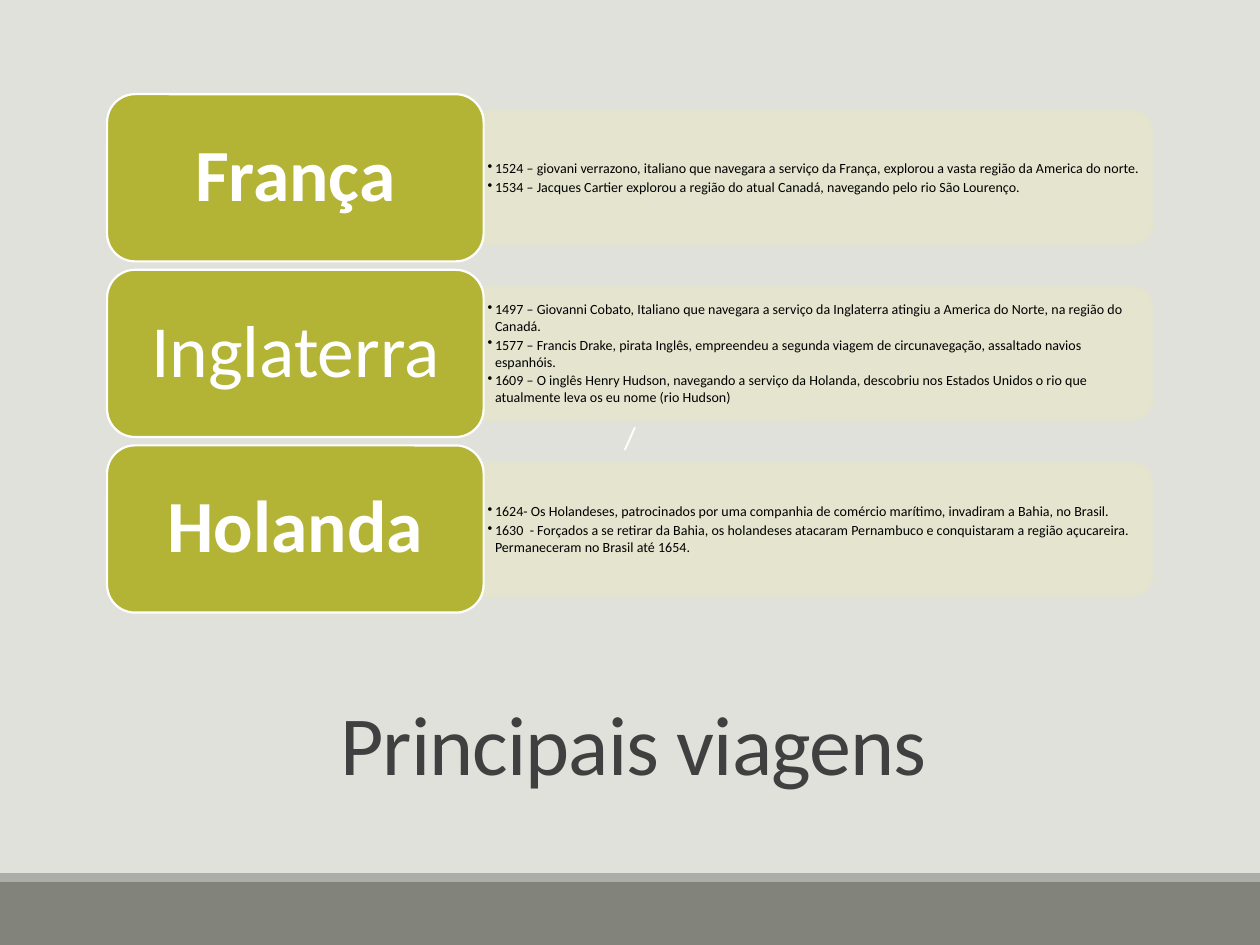
"""Build a slide on the main voyages of France, England and Holland."""
import pptx
import pptx.util
import pptx.dml.color
import pptx.enum.shapes
import pptx.enum.text
import pptx.oxml.ns
import lxml.etree

Cm = pptx.util.Cm
Pt = pptx.util.Pt
Kind = pptx.enum.shapes.MSO_SHAPE
Align = pptx.enum.text.PP_ALIGN
qn = pptx.oxml.ns.qn

theme = {
    "back": "E1E1DB", "foot": "82847C", "rule": "ACADA8",
    "card": "B3B435", "band": "E5E5CE", "edge": "FFFFFF",
    "title": {"name": "Calibri", "size": Pt(48), "color": "404040"},
    "label": {"name": "Calibri", "size": Pt(42), "color": "FFFFFF"},
    "note": {"name": "Calibri", "size": Pt(8), "color": "000000"},
    "mark": {"name": "Calibri", "size": Pt(18), "color": "FFFFFF"},
}

rows = [
    ("França", True, [
        "1524 – giovani verrazono, italiano que navegara a serviço da França, explorou a vasta região da America do norte.",
        "1534 – Jacques Cartier explorou a região do atual Canadá, navegando pelo rio São Lourenço.",
    ]),
    ("Inglaterra", False, [
        "1497 – Giovanni Cobato, Italiano que navegara a serviço da Inglaterra atingiu a America do Norte, na região do Canadá.",
        "1577 – Francis Drake, pirata Inglês, empreendeu a segunda viagem de circunavegação, assaltado navios espanhóis.",
        "1609 – O inglês Henry Hudson, navegando a serviço da Holanda, descobriu nos Estados Unidos o rio que atualmente leva os eu nome (rio Hudson)",
    ]),
    ("Holanda", True, [
        "1624- Os Holandeses, patrocinados por uma companhia de comércio marítimo, invadiram a Bahia, no Brasil.",
        "1630  - Forçados a se retirar da Bahia, os holandeses atacaram Pernambuco e conquistaram a região açucareira. Permaneceram no Brasil até 1654.",
    ]),
]


def draw(kind, box, fill, line=None):
    shape = slide.shapes.add_shape(kind, *[Cm(n) for n in box])
    shape.shadow.inherit = False
    shape.fill.solid()
    shape.fill.fore_color.rgb = pptx.dml.color.RGBColor.from_string(fill)
    if line:
        shape.line.color.rgb = pptx.dml.color.RGBColor.from_string(line)
        shape.line.width = Pt(1.25)
    else:
        shape.line.fill.background()
    return shape


def write(shape, texts, font, inset=(0, 0), **form):
    frame = shape.text_frame
    side, edge = [Cm(n) for n in inset]
    setup = {
        "word_wrap": True, "auto_size": pptx.enum.text.MSO_AUTO_SIZE.NONE,
        "vertical_anchor": pptx.enum.text.MSO_ANCHOR.MIDDLE,
        "margin_left": side, "margin_right": side,
        "margin_top": edge, "margin_bottom": edge,
    }
    for key, val in setup.items():
        setattr(frame, key, val)
    for num, text in enumerate(texts):
        para = frame.add_paragraph() if num else frame.paragraphs[0]
        for key, val in form.items():
            setattr(para, key, val)
        run = para.add_run()
        run.text = text
        for key, val in font.items():
            if key == "color":
                run.font.color.rgb = pptx.dml.color.RGBColor.from_string(val)
            else:
                setattr(run.font, key, val)
    return frame.paragraphs


deck = pptx.Presentation()
deck.slide_width, deck.slide_height = Cm(25.4), Cm(19.05)
slide = deck.slides.add_slide(deck.slide_layouts[5])
slide.background.fill.solid()
slide.background.fill.fore_color.rgb = pptx.dml.color.RGBColor.from_string(theme["back"])

draw(Kind.RECTANGLE, (0, 17.78, 25.4, 1.27), theme["foot"])
draw(Kind.RECTANGLE, (0, 17.6, 25.4, 0.18), theme["rule"])
field = draw(Kind.RECTANGLE, (0, 0, 25.4, 17.6), theme["back"])
write(field, ["/"], theme["mark"], alignment=Align.CENTER, space_after=Pt(6))

title = slide.shapes.title
place = {"left": 2.29, "top": 13.46, "width": 20.96, "height": 3.3}
for key, val in place.items():
    setattr(title, key, Cm(val))
head = write(title, ["Principais viagens"], theme["title"], (0.25, 0.13),
             alignment=Align.CENTER, line_spacing=0.85)
head[0].runs[0].font._element.set("spc", "-50")
field._element.addnext(title._element)

left, top, wide, high, step = 2.16, 1.9, 7.59, 3.37, 3.54
thick, long = 2.69, 13.49
for num, (name, bold, notes) in enumerate(rows):
    y = top + num * step
    x = left + wide
    spot = (x + (long - thick) / 2, y + (high - long) / 2, thick, long)
    band = draw(Kind.ROUND_2_SAME_RECTANGLE, spot, theme["band"], theme["band"])
    band.rotation = 90
    for tone in band._element.spPr.iter(qn("a:srgbClr")):
        lxml.etree.SubElement(tone, qn("a:alpha"), val="90000")

    body = slide.shapes.add_textbox(Cm(x), Cm(y + 0.46), Cm(13.36), Cm(2.44))
    for para in write(body, notes, theme["note"], (0.08, 0.05),
                      alignment=Align.LEFT, space_after=Pt(1.2)):
        prop = para._p.get_or_add_pPr()
        prop.set("marL", str(Cm(0.15)))
        prop.set("indent", str(-Cm(0.15)))
        lxml.etree.SubElement(prop, qn("a:buChar"), char="•")

    card = draw(Kind.ROUNDED_RECTANGLE, (left, y, wide, high), theme["card"], theme["edge"])
    write(card, [name], {**theme["label"], "bold": bold}, (0.44, 0.23),
          alignment=Align.CENTER, line_spacing=0.9)

deck.save("out.pptx")
